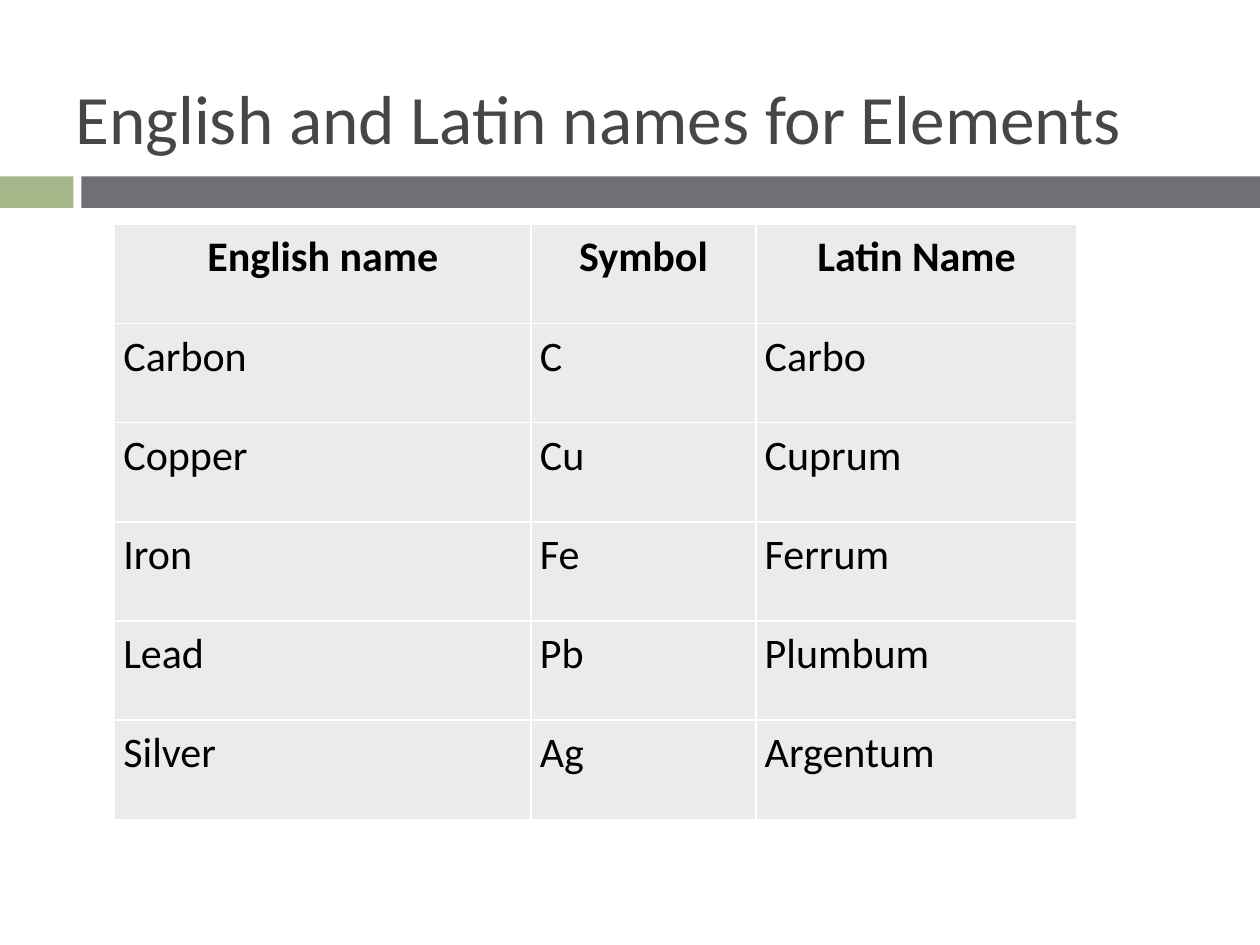
from lxml import etree
from pptx import Presentation
from pptx.dml.color import RGBColor
from pptx.enum.shapes import MSO_SHAPE
from pptx.enum.text import MSO_ANCHOR, PP_ALIGN
from pptx.oxml.ns import qn
from pptx.util import Pt

FONT = "Calibri"
GREEN = RGBColor(0xA7, 0xB7, 0x89)
GRAY = RGBColor(0x6F, 0x6F, 0x74)
TITLE = RGBColor(0x46, 0x46, 0x4A)
BLACK = RGBColor(0, 0, 0)
CELL = RGBColor(0xEB, 0xEB, 0xEB)
WHITE = RGBColor(0xFF, 0xFF, 0xFF)

COLUMN_WIDTHS = [238, 128.5, 183.5]
ROW_HEIGHT = 56.67
ELEMENTS = [
    ("English name", "Symbol", "Latin Name"),
    ("Carbon", "C", "Carbo"),
    ("Copper", "Cu", "Cuprum"),
    ("Iron", "Fe", "Ferrum"),
    ("Lead", "Pb", "Plumbum"),
    ("Silver", "Ag", "Argentum"),
]


def style_font(font, size, color, bold=False):
    font.name = FONT
    font.size = Pt(size)
    font.color.rgb = color
    font.bold = bold


def add_bar(s, left, width, color):
    bar = s.shapes.add_shape(MSO_SHAPE.RECTANGLE, Pt(left), Pt(100.8), Pt(width), Pt(18))
    bar.shadow.inherit = False
    bar.fill.solid()
    bar.fill.fore_color.rgb = color
    bar.line.fill.background()


def add_title(s, text):
    tf = s.shapes.add_textbox(Pt(36), Pt(21.6), Pt(618.5), Pt(90)).text_frame
    tf.word_wrap = True
    tf.vertical_anchor = MSO_ANCHOR.MIDDLE
    p = tf.paragraphs[0]
    p.text = text
    style_font(p.runs[0].font, 39.6, TITLE)


def add_borders(cell, color, width):
    tc_pr = cell._tc.get_or_add_tcPr()
    for side in ("a:lnL", "a:lnR", "a:lnT", "a:lnB"):
        ln = etree.SubElement(tc_pr, qn(side), w=str(Pt(width)))
        fill = etree.SubElement(ln, qn("a:solidFill"))
        etree.SubElement(fill, qn("a:srgbClr"), val=str(color))


def fill_cell(cell, text, header):
    cell.margin_left = cell.margin_right = Pt(5)
    cell.margin_top = cell.margin_bottom = 0
    # Borders come before the fill in the cell properties
    add_borders(cell, WHITE, 1)
    cell.fill.solid()
    cell.fill.fore_color.rgb = CELL
    p = cell.text_frame.paragraphs[0]
    p.text = text
    p.line_spacing = 1.15
    p.alignment = PP_ALIGN.CENTER if header else PP_ALIGN.LEFT
    style_font(p.runs[0].font, 24, BLACK, bold=header)


def add_element_table(s, rows):
    table = s.shapes.add_table(
        len(rows), len(COLUMN_WIDTHS), Pt(65.5), Pt(128.2),
        Pt(sum(COLUMN_WIDTHS)), Pt(ROW_HEIGHT * len(rows))).table
    table.horz_banding = False
    for column, width in zip(table.columns, COLUMN_WIDTHS):
        column.width = Pt(width)
    for i, names in enumerate(rows):
        table.rows[i].height = Pt(ROW_HEIGHT)
        for j, name in enumerate(names):
            fill_cell(table.cell(i, j), name, header=i == 0)


def main():
    prs = Presentation()
    prs.slide_width, prs.slide_height = Pt(720), Pt(540)
    s = prs.slides.add_slide(prs.slide_layouts[6])

    # Divider under the title
    add_bar(s, 0, 42, GREEN)
    add_bar(s, 46.5, 673.5, GRAY)

    # Title and table
    add_title(s, "English and Latin names for Elements")
    add_element_table(s, ELEMENTS)

    prs.save("out.pptx")


if __name__ == "__main__":
    main()
